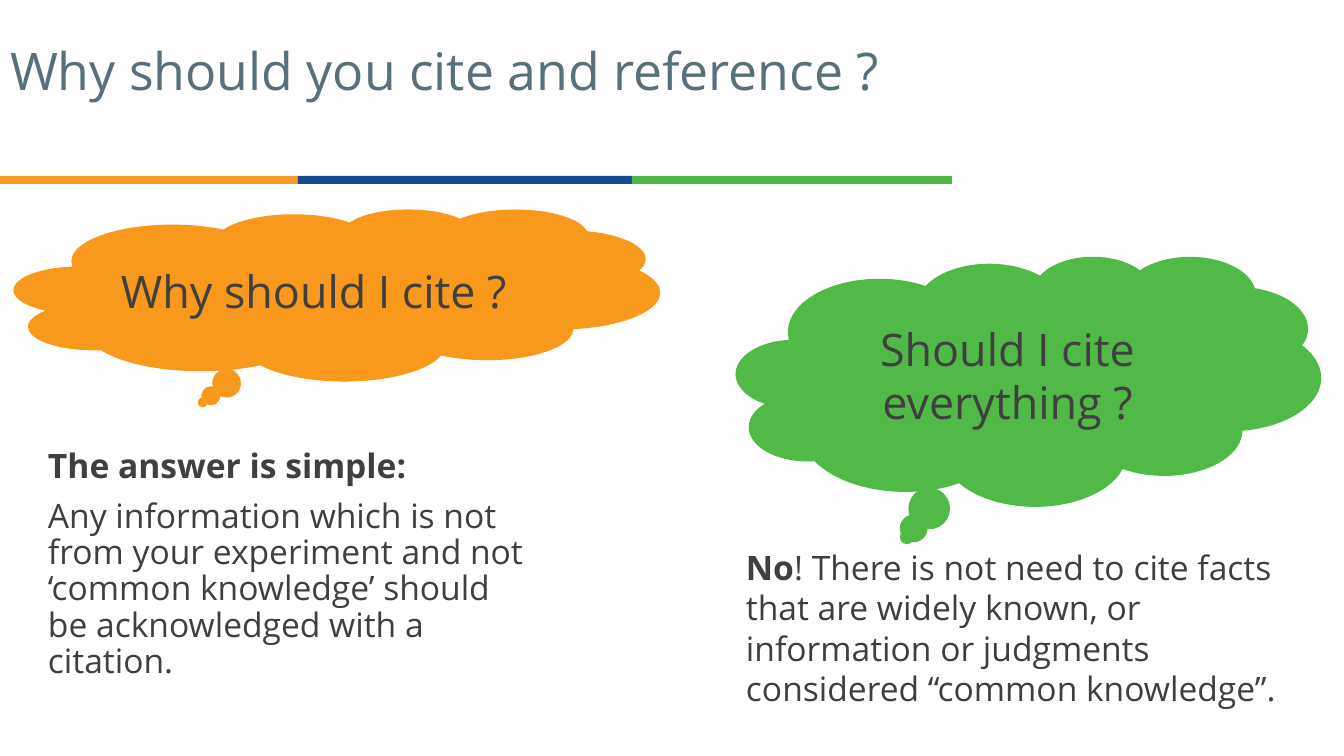
from pptx import Presentation
from pptx.dml.color import RGBColor
from pptx.enum.shapes import MSO_SHAPE
from pptx.enum.text import MSO_ANCHOR, PP_ALIGN
from pptx.util import Pt

RECT, CLOUD = MSO_SHAPE.RECTANGLE, MSO_SHAPE.CLOUD_CALLOUT
TOP, MID = MSO_ANCHOR.TOP, MSO_ANCHOR.MIDDLE
LEFT, MIDDLE = PP_ALIGN.LEFT, PP_ALIGN.CENTER

# Content: each paragraph is a list of (text, bold) runs
TITLE = [[("Why should you cite and reference ?", False)]]
ANSWER = [
    [("The answer is simple:", True)],
    [("Any information which is not from your experiment and not "
      "‘common knowledge’ should be acknowledged with a citation.", False)],
]
FACTS = [
    [("No", True),
     ("! There is not need to cite facts that are widely known, or", False)],
    [("information or judgments considered “common knowledge”.", False)],
]
BARS = [(298, "F49925"), (334, "154A90"), (320, "4EB748")]  # width, fill
CLOUDS = [  # text, box, fill
    ("Why should I cite ?", (14, 209, 646, 172), "F8981D"),
    ("Should I cite everything ?", (736, 256, 585, 250), "51B948"),
]
TEXTS = [  # paragraphs, box, format
    (TITLE, (0, 41, 1059, 119),
     {"size": 37, "color": "586F7C", "line": 0.9}),
    (ANSWER, (30, 444, 516, 248), {"line": 0.9, "gap": 10, "inset": 18}),
    (FACTS, (736, 542, 594, 173), {}),
]
BASE = {"size": 24, "color": "3F3F3F", "line": 1.0, "gap": 0, "inset": 10,
        "align": LEFT, "anchor": TOP}
TAIL = (-0.208, 0.625)
BAR_TOP, BAR_TALL = 176, 8
SCALE = 914400 / 100.8


def px(n):
    return round(n * SCALE)


def color(code):
    return RGBColor.from_string(code)


def write(shape, paras, **extra):
    look = {**BASE, **extra}
    frame = shape.text_frame
    setup = {"word_wrap": True, "vertical_anchor": look["anchor"],
             "margin_left": px(look["inset"]), "margin_right": px(10),
             "margin_top": px(5), "margin_bottom": px(5)}
    for key, value in setup.items():
        setattr(frame, key, value)
    for i, runs in enumerate(paras):
        para = frame.paragraphs[0] if i == 0 else frame.add_paragraph()
        layout = {"alignment": look["align"], "line_spacing": look["line"],
                  "space_before": Pt(look["gap"] if i else 0)}
        for key, value in layout.items():
            setattr(para, key, value)
        for text, bold in runs:
            run = para.add_run()
            run.text = text
            style = {"name": "Open Sans", "size": Pt(look["size"]), "bold": bold}
            for key, value in style.items():
                setattr(run.font, key, value)
            run.font.color.rgb = color(look["color"])


def draw(kind, box, fill):
    shape = slide.shapes.add_shape(kind, *map(px, box))
    shape.shadow.inherit = False
    shape.fill.solid()
    shape.fill.fore_color.rgb = color(fill)
    shape.line.fill.background()
    return shape


deck = Presentation()
deck.slide_width, deck.slide_height = px(1344), px(756)
slide = deck.slides.add_slide(deck.slide_layouts[6])

# Three-colour rule under the title, laid end to end
left = 0
for wide, fill in BARS:
    draw(RECT, (left, BAR_TOP, wide, BAR_TALL), fill)
    left += wide

# Title and answers
for paras, box, look in TEXTS:
    write(slide.shapes.add_textbox(*map(px, box)), paras, **look)

# Question clouds
for text, box, fill in CLOUDS:
    cloud = draw(CLOUD, box, fill)
    for i, value in enumerate(TAIL):
        cloud.adjustments[i] = value
    write(cloud, [[(text, False)]], size=32, align=MIDDLE, anchor=MID)

deck.save("out.pptx")
